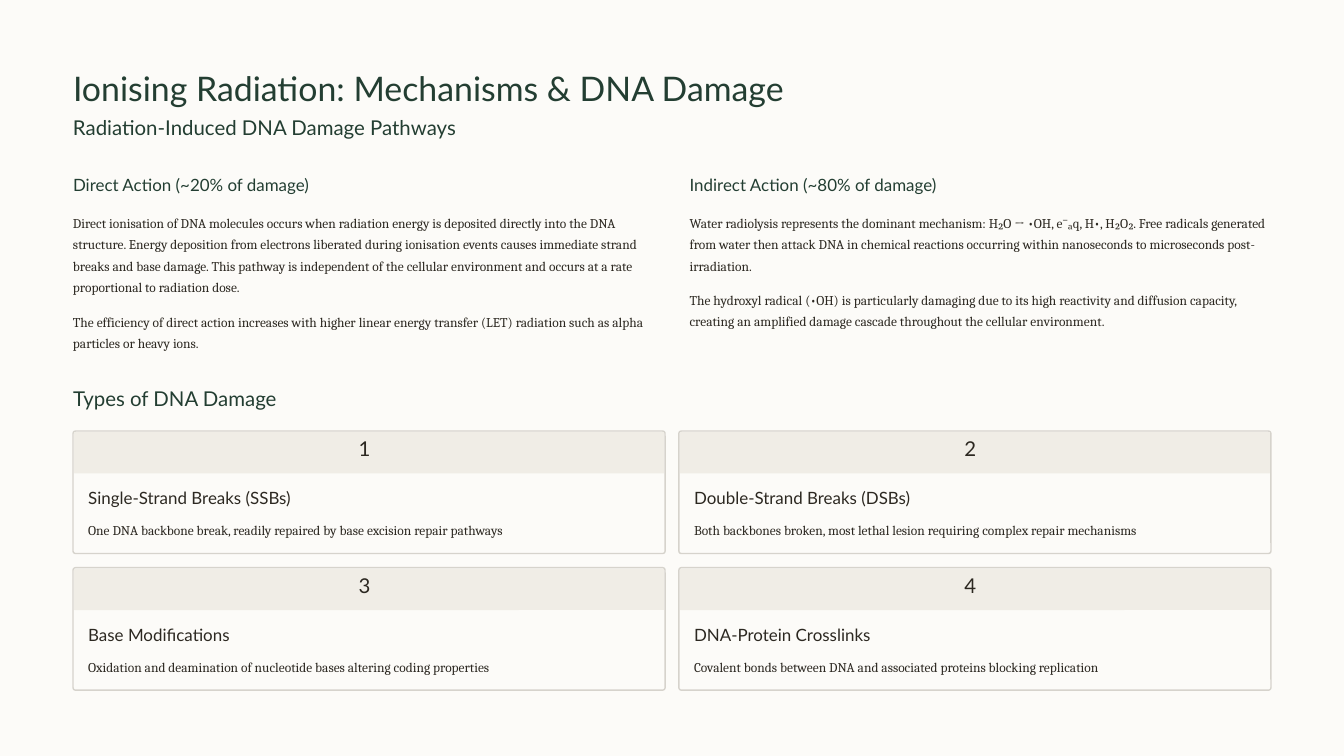
from pptx import Presentation
from pptx.dml.color import RGBColor
from pptx.enum.shapes import MSO_SHAPE
from pptx.util import Pt

COLOURS = {"paper": "FCFBF8", "green": "233E32", "ink": "2C2821",
           "band": "F0EDE6", "border": "D6D3CC"}
STYLES = {
    "title": ("Lato", 29, 36.5, "green"),
    "section": ("Lato", 17.5, 21.5, "green"),
    "heading": ("Lato", 14.5, 18, "green"),
    "body": ("Cambria", 11.5, 18.5, "ink"),
    "number": ("Lato", 17.5, 17.5, "ink"),
    "card": ("Lato", 14.5, 18, "ink"),
}

LEFT = 62.6
COLUMN_WIDTH = 499
CARD_TOP, CARD_WIDTH, CARD_HEIGHT = 369.5, 507.5, 105
CARD_STEP_X, CARD_STEP_Y = 519.3, 117.1

COLUMNS = [
    (LEFT, "Direct Action (~20% of damage)", [
        (179.3, 75, "Direct ionisation of DNA molecules occurs when radiation energy is deposited directly into the DNA structure. Energy deposition from electrons liberated during ionisation events causes immediate strand breaks and base damage. This pathway is independent of the cellular environment and occurs at a rate proportional to radiation dose."),
        (264.2, 37.5, "The efficiency of direct action increases with higher linear energy transfer (LET) radiation such as alpha particles or heavy ions."),
    ]),
    (591.1, "Indirect Action (~80% of damage)", [
        (179.3, 56, "Water radiolysis represents the dominant mechanism: H₂O → •OH, e⁻ₐq, H•, H₂O₂. Free radicals generated from water then attack DNA in chemical reactions occurring within nanoseconds to microseconds post-irradiation."),
        (245.5, 37.5, "The hydroxyl radical (•OH) is particularly damaging due to its high reactivity and diffusion capacity, creating an amplified damage cascade throughout the cellular environment."),
    ]),
]
DAMAGE_TYPES = [
    ("Single-Strand Breaks (SSBs)", "One DNA backbone break, readily repaired by base excision repair pathways"),
    ("Double-Strand Breaks (DSBs)", "Both backbones broken, most lethal lesion requiring complex repair mechanisms"),
    ("Base Modifications", "Oxidation and deamination of nucleotide bases altering coding properties"),
    ("DNA-Protein Crosslinks", "Covalent bonds between DNA and associated proteins blocking replication"),
]


class SlideBuilder:
    def __init__(self, page):
        self.page = page
        page.background.fill.solid()
        page.background.fill.fore_color.rgb = self.colour("paper")

    def colour(self, name):
        return RGBColor.from_string(COLOURS[name])

    def text(self, words, style, left, top, width, height):
        font_name, size, spacing, colour = STYLES[style]
        box = self.page.shapes.add_textbox(Pt(left), Pt(top), Pt(width), Pt(height))
        frame = box.text_frame
        frame.word_wrap = True
        frame.margin_left = frame.margin_right = 0
        frame.margin_top = frame.margin_bottom = 0
        para = frame.paragraphs[0]
        para.text = words
        para.line_spacing = Pt(spacing)
        para.font.name = font_name
        para.font.size = Pt(size)
        para.font.color.rgb = self.colour(colour)

    def panel(self, left, top, width, height, rounding, fill, border=None):
        shape = self.page.shapes.add_shape(
            MSO_SHAPE.ROUNDED_RECTANGLE, Pt(left), Pt(top), Pt(width), Pt(height))
        shape.adjustments[0] = rounding
        shape.shadow.inherit = False
        shape.fill.solid()
        shape.fill.fore_color.rgb = self.colour(fill)
        if border:
            shape.line.color.rgb = self.colour(border)
            shape.line.width = Pt(1.2)
        else:
            shape.line.fill.background()

    def card(self, number, heading, detail, left, top):
        self.panel(left, top, CARD_WIDTH, CARD_HEIGHT, 0.02, "paper", "border")
        self.panel(left + 1, top + 1, CARD_WIDTH - 2, 35.3, 0.01, "band")
        self.text(str(number), "number", left + 244.8, top + 8, 17.5, 22)
        self.text(heading, "card", left + 13, top + 48, 481.5, 18)
        self.text(detail, "body", left + 13, top + 73.5, 481.5, 18.7)


def main():
    deck = Presentation()
    deck.slide_width, deck.slide_height = Pt(1152), Pt(648)
    builder = SlideBuilder(deck.slides.add_slide(deck.slide_layouts[6]))

    builder.text("Ionising Radiation: Mechanisms & DNA Damage", "title", LEFT, 56.2, 630, 36.5)
    builder.text("Radiation-Induced DNA Damage Pathways", "section", LEFT, 97.9, 335, 22)
    for left, heading, passages in COLUMNS:
        builder.text(heading, "heading", left, 149, 217, 18)
        for top, height, words in passages:
            builder.text(words, "body", left, top, COLUMN_WIDTH, height)

    builder.text("Types of DNA Damage", "section", LEFT, 330.5, 176, 22)
    for index, (heading, detail) in enumerate(DAMAGE_TYPES):
        row, column = divmod(index, 2)
        builder.card(index + 1, heading, detail,
                     LEFT + column * CARD_STEP_X, CARD_TOP + row * CARD_STEP_Y)

    deck.save("out.pptx")


if __name__ == "__main__":
    main()
